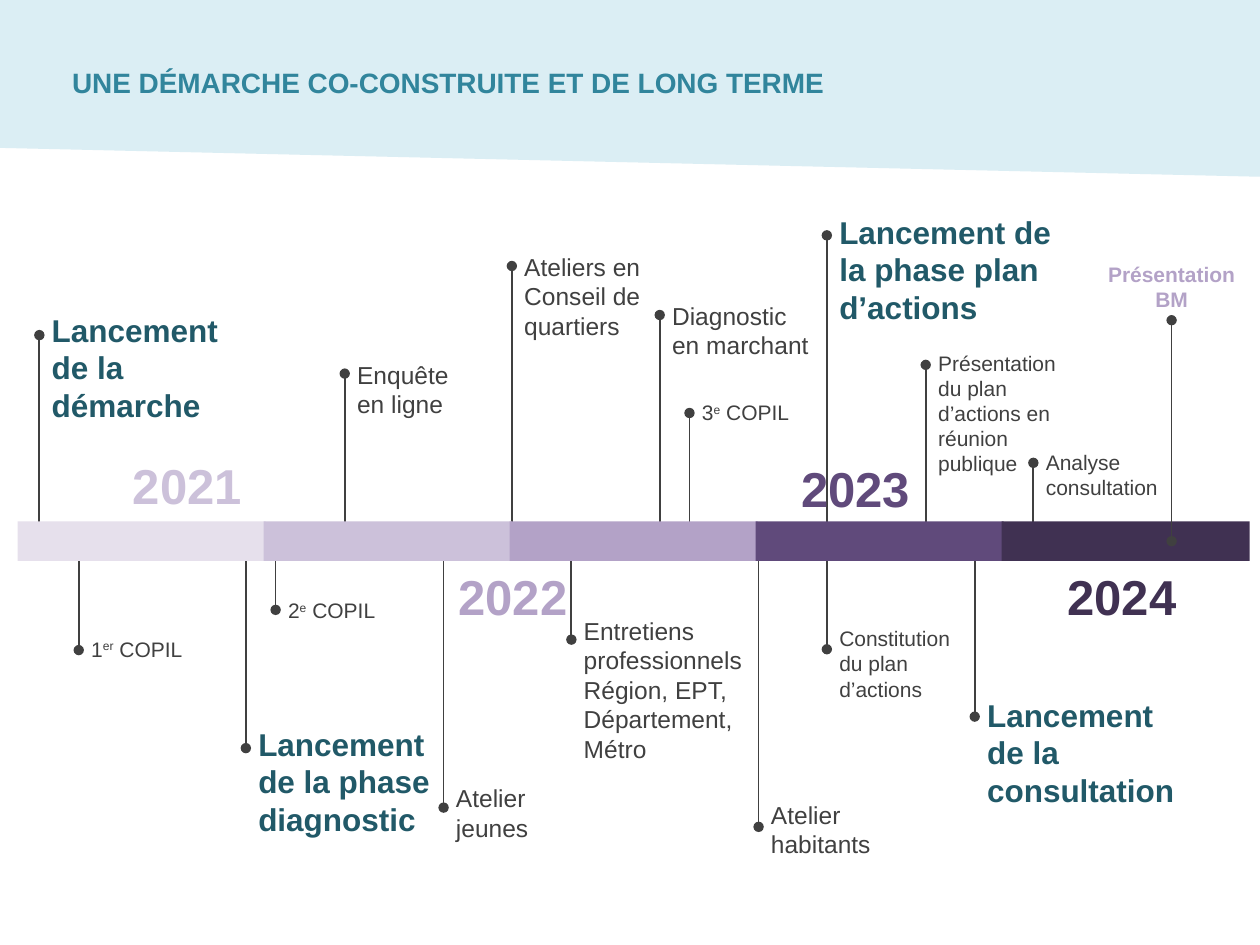
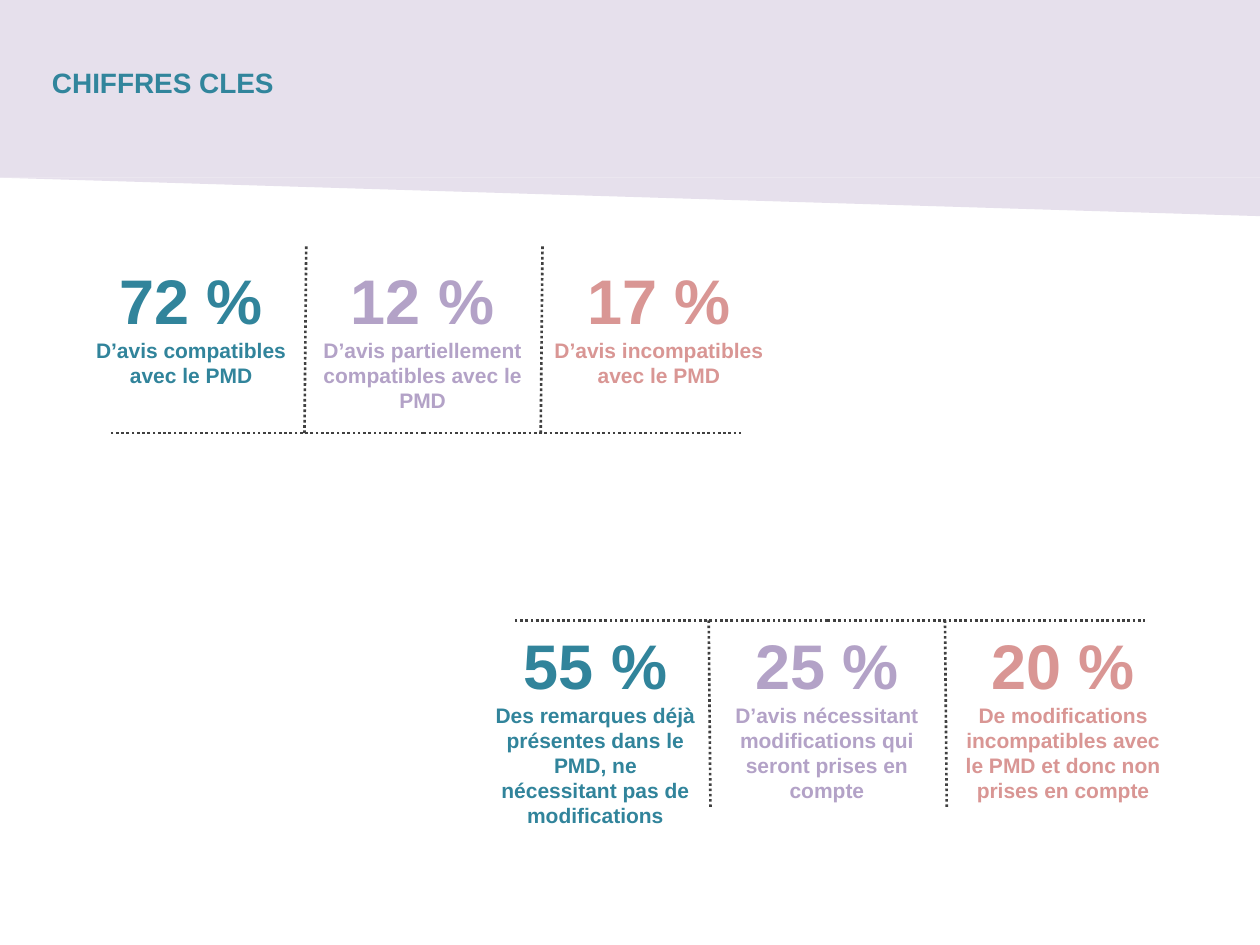
from dataclasses import dataclass

from lxml.etree import SubElement
from pptx import Presentation
from pptx.dml.color import RGBColor as Rgb
from pptx.enum.dml import MSO_LINE as Dash
from pptx.enum.shapes import MSO_CONNECTOR as Link, MSO_SHAPE as Form
from pptx.enum.text import MSO_ANCHOR as Anchor, MSO_AUTO_SIZE as Fit, PP_ALIGN as Align
from pptx.oxml.ns import qn
from pptx.util import Pt


@dataclass(frozen=True)
class Theme:
    font: str = "Arial"
    ink: str = "404040"
    title: str = "31859C"
    step: str = "215968"
    teal: str = "31849B"
    mauve: str = "B3A2C7"
    rose: str = "D99694"
    sky: str = "DBEEF4"
    haze: str = "E6E0EC"
    lilac: str = "CCC1DA"
    plum: str = "604A7B"
    night: str = "403152"
    small: int = 12
    body: int = 14
    head: int = 16
    large: int = 18
    year: int = 28
    stat: int = 36


T = Theme()
WIDTH, HEIGHT = 720, 540
BAR_TOP, BAR_HIGH = 298, 22.5
BAR_MID = BAR_TOP + BAR_HIGH / 2
BARS = [T.haze, T.lilac, T.mauve, T.plum, T.night]
YEARS = [
    ("2021", 62, 257, T.lilac),
    ("2022", 248, 320, T.mauve),
    ("2023", 444, 258.5, T.plum),
    ("2024", 596, 320, T.night),
]
STEPS = [
    (22.5, 191.5, 174, 124, "Lancement de la démarche"),
    (140.5, 427.5, 410.5, 124, "Lancement de la phase\ndiagnostic"),
    (472.5, 134.5, 118, 140.5, "Lancement de la phase plan d’actions"),
    (557, 409.5, 394, 124, "Lancement de la consultation"),
]
EVENTS = [
    (197, 213.5, 202, 124, "Enquête\nen ligne"),
    (292.5, 152, 140.5, 124, "Ateliers en Conseil de quartiers"),
    (253.5, 461.5, 444, 124, "Atelier\njeunes"),
    (433.5, 472.5, 453.5, 124, "Atelier\nhabitants"),
    (377, 180, 168.5, 124, "Diagnostic\nen marchant"),
    (326.5, 365.5, 348.5, 124,
     "Entretiens\nprofessionnels Région, EPT, Département, Métro"),
]
NOTES = [
    (45, 371.5, 360, 79, "1^er^ COPIL"),
    (157.5, 348.5, 338, 79, "2^e^ COPIL"),
    (394, 236, 225, 79, "3^e^ COPIL"),
    (472.5, 371, 354, 79, "Constitution du plan d’actions"),
    (529, 208.5, 196.5, 84, "Présentation du plan d’actions en réunion publique"),
    (590.5, 264.5, 253.5, 79, "Analyse consultation"),
]
VIEWS = [
    ("72 %", "D’avis compatibles avec le PMD"),
    ("12 %", "D’avis partiellement compatibles avec le PMD"),
    ("17 %", "D’avis incompatibles avec le PMD"),
]
EDITS = [
    ("55 %", "Des remarques déjà présentes dans le PMD, ne nécessitant pas de modifications"),
    ("25 %", "D’avis nécessitant modifications qui seront prises en compte"),
    ("20 %", "De modifications incompatibles avec le PMD et donc non prises en compte"),
]


def write(frame, text, size=T.body, color=T.ink, bold=False, align=Align.LEFT, first=None):
    frame.word_wrap = True
    frame.auto_size = Fit.NONE
    frame.vertical_anchor = Anchor.TOP
    for i, line in enumerate(text.split("\n")):
        para = frame.add_paragraph() if i else frame.paragraphs[0]
        para.alignment = align
        for j, part in enumerate(line.split("^")):
            run = para.add_run()
            run.text = part
            font = run.font
            font.name, font.bold = T.font, bold
            font.size = Pt(first if first and i == 0 else size)
            font.color.rgb = Rgb.from_string(color)
            if j % 2:
                run._r.get_or_add_rPr().set("baseline", "30000")


def label(slide, left, top, width, height, text, **style):
    box = slide.shapes.add_textbox(Pt(left), Pt(top), Pt(width), Pt(height))
    write(box.text_frame, text, **style)


def block(slide, form, left, top, width, height, color):
    shape = slide.shapes.add_shape(form, Pt(left), Pt(top), Pt(width), Pt(height))
    shape.shadow.inherit = False
    shape.fill.solid()
    shape.fill.fore_color.rgb = Rgb.from_string(color)
    shape.line.fill.background()
    return shape


def stroke(slide, x1, y1, x2, y2, width=1.5, dash=None, ends=None):
    link = slide.shapes.add_connector(Link.STRAIGHT, Pt(x1), Pt(y1), Pt(x2), Pt(y2))
    link.line.color.rgb = Rgb.from_string(T.ink)
    link.line.width = Pt(width)
    if dash:
        link.line.dash_style = dash
    props = link.element.spPr
    if ends:
        for tag in ("a:headEnd", "a:tailEnd"):
            SubElement(props.get_or_add_ln(), qn(tag)).set("type", ends)
    SubElement(props, qn("a:effectLst"))


def pin(slide, x, y):
    stroke(slide, x, y, x, BAR_MID, width=1, ends="oval")


def page(deck, text, left, high, slant, color):
    slide = deck.slides.add_slide(deck.slide_layouts[5])
    block(slide, Form.RECTANGLE, 0, 0, WIDTH, high, color)
    wedge = block(slide, Form.RIGHT_TRIANGLE, 0, high, WIDTH, slant, color)
    wedge.rotation = 180
    title = slide.shapes.title
    title.left, title.top, title.width, title.height = Pt(left), Pt(34), Pt(580), Pt(27)
    write(title.text_frame, text, size=T.head, color=T.title, bold=True)
    wedge.element.addnext(title.element)
    return slide


def marks(slide, items, **style):
    for x, y, top, width, text in items:
        pin(slide, x, y)
        label(slide, x, top, width, 72, text, **style)


def stats(slide, left, top, rule, span, cells):
    mid = left + 197.5
    for end in (left + 17.5, left + 379):
        stroke(slide, mid, rule, end, rule, dash=Dash.ROUND_DOT)
    edges = [left, left + 129.5, left + 264.5, left + 399.5]
    for edge in edges[1:3]:
        stroke(slide, edge, rule, edge + 1, rule + span, dash=Dash.ROUND_DOT)
    tints = (T.teal, T.mauve, T.rose)
    for x, end, tint, (rate, text) in zip(edges, edges[1:], tints, cells):
        label(slide, x, top, end - x, 101.5, f"{rate}\n{text}", size=T.small,
              first=T.stat, color=tint, bold=True, align=Align.CENTER)


def plan(deck):
    slide = page(deck, "UNE DÉMARCHE CO-CONSTRUITE ET DE LONG TERME", 34, 84.5, 16.5, T.sky)
    marks(slide, STEPS, size=T.large, color=T.step, bold=True)
    marks(slide, EVENTS)
    marks(slide, NOTES, size=T.small)
    for i, color in enumerate(BARS):
        block(slide, Form.RECTANGLE, 10 + 140.6 * i, BAR_TOP, 141.75, BAR_HIGH, color)
    for text, left, top, color in YEARS:
        label(slide, left, top, 90, 41, text, size=T.year, color=color,
              bold=True, align=Align.CENTER)
    pin(slide, 669.5, 183)
    label(slide, 624.5, 146, 90, 36, "Présentation BM", size=T.small,
          color=T.mauve, bold=True, align=Align.CENTER)


def figures(deck):
    slide = page(deck, "CHIFFRES CLES", 22.5, 101.5, 22, T.haze)
    stats(slide, 44.5, 146, 247.5, -107, VIEWS)
    stats(slide, 275.5, 354.5, 354.5, 107, EDITS)


def main():
    deck = Presentation()
    deck.slide_width, deck.slide_height = Pt(WIDTH), Pt(HEIGHT)
    plan(deck)
    figures(deck)
    deck.save("out.pptx")


if __name__ == "__main__":
    main()
